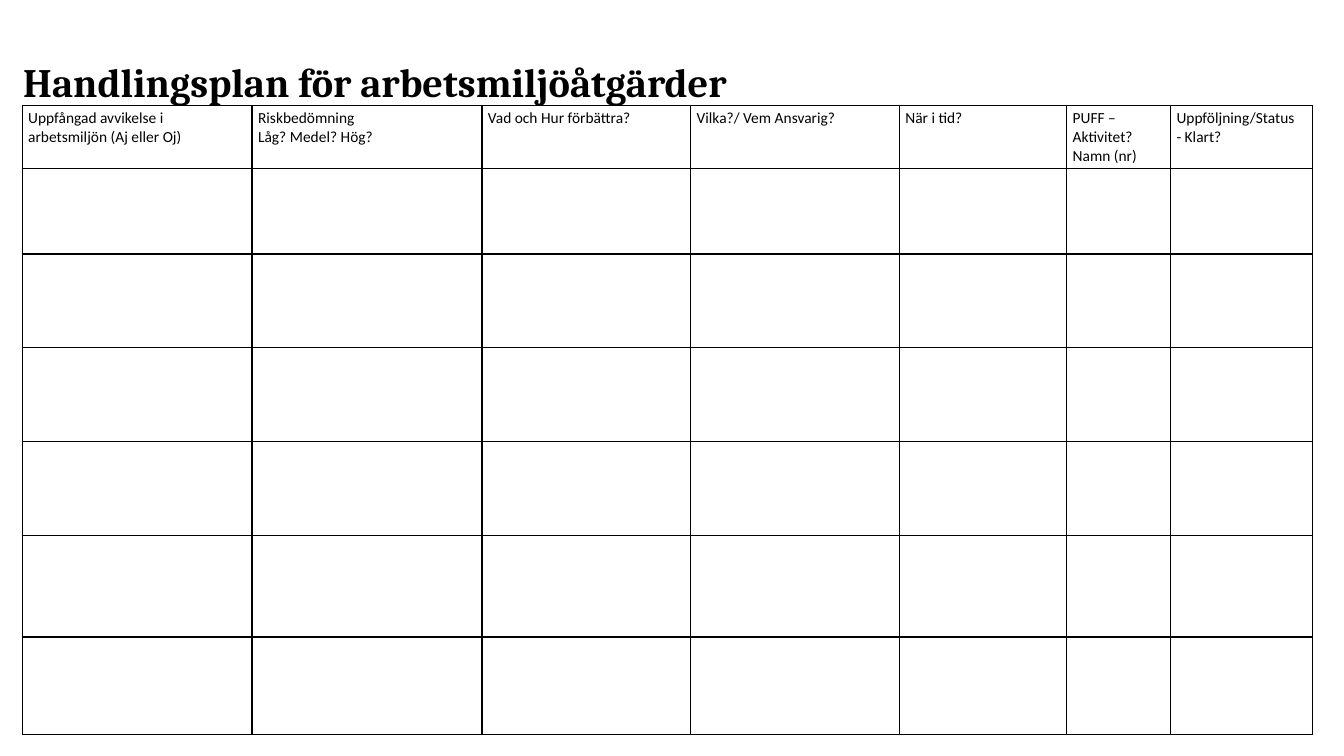
"""Build the work environment action plan slide."""
import dataclasses

import pptx
import pptx.dml.color
import pptx.enum.text
import pptx.oxml
import pptx.oxml.ns
import pptx.util

Inches = pptx.util.Inches


@dataclasses.dataclass(frozen=True)
class Theme:
    """Colours, fonts and type sizes."""
    ink: str = "000000"
    paper: str = "FFFFFF"
    title_font: str = "Cambria"
    body_font: str = "Calibri"
    title_size: float = 28.8
    body_size: float = 11
    border_width: float = 1


HEADINGS = [
    "Uppfångad avvikelse i arbetsmiljön (Aj eller Oj)",
    "Riskbedömning\nLåg? Medel? Hög?",
    "Vad och Hur förbättra?",
    "Vilka?/ Vem Ansvarig?",
    "När i tid?",
    "PUFF – Aktivitet?\vNamn (nr)",
    "Uppföljning/Status \v- Klart?",
]
COLUMN_WIDTHS = [2.28, 2.28, 2.07, 2.07, 1.66, 1.03, 1.41]
ROW_HEIGHTS = [0.62, 0.85, 0.93, 0.93, 0.93, 1.01, 0.97]


class PlanSlide:
    """Hold the theme and the current slide."""

    def __init__(self, deck, theme):
        """Add a blank page to the deck."""
        self.theme = theme
        self.page = deck.slides.add_slide(deck.slide_layouts[6])

    def apply(self, target, values):
        """Set each named attribute on the target."""
        for name, value in values.items():
            setattr(target, name, value)

    def style_font(self, para, name, size, bold=False):
        """Give a paragraph and its runs one font."""
        values = {"name": name, "size": pptx.util.Pt(size), "bold": bold}
        for font in [para.font] + [span.font for span in para.runs]:
            self.apply(font, values)
            font.color.rgb = pptx.dml.color.RGBColor.from_string(self.theme.ink)

    def add_title(self, text, left, top, width, height):
        """Add the bold heading."""
        box = self.page.shapes.add_textbox(
            Inches(left), Inches(top), Inches(width), Inches(height))
        self.apply(box.text_frame, {
            "word_wrap": True,
            "vertical_anchor": pptx.enum.text.MSO_ANCHOR.MIDDLE,
            "text": text,
        })
        para = box.text_frame.paragraphs[0]
        para.line_spacing = 0.9
        self.style_font(para, self.theme.title_font, self.theme.title_size, True)

    def add_borders(self, cell):
        """Draw a line on all four sides of a cell."""
        properties = cell._tc.get_or_add_tcPr()
        width = pptx.util.Pt(self.theme.border_width)
        for index, side in enumerate("LRTB"):
            line = pptx.oxml.parse_xml(
                f'<a:ln{side} {pptx.oxml.ns.nsdecls("a")} w="{width}"><a:solidFill>'
                f'<a:srgbClr val="{self.theme.ink}"/></a:solidFill></a:ln{side}>')
            properties.insert(index, line)

    def fill_cell(self, cell, text):
        """Set the text and look of one cell."""
        self.apply(cell, {
            "text": text,
            "margin_left": Inches(0.06), "margin_right": Inches(0.06),
            "margin_top": Inches(0.03), "margin_bottom": Inches(0.03),
        })
        for para in cell.text_frame.paragraphs:
            self.style_font(para, self.theme.body_font, self.theme.body_size)
        cell.fill.solid()
        cell.fill.fore_color.rgb = pptx.dml.color.RGBColor.from_string(self.theme.paper)
        self.add_borders(cell)

    def add_table(self, headings, widths, heights, left, top):
        """Add a ruled table with headings above empty rows."""
        table = self.page.shapes.add_table(
            len(heights), len(widths), Inches(left), Inches(top),
            Inches(sum(widths)), Inches(sum(heights))).table
        self.apply(table, {"first_row": False, "horz_banding": False})
        for column, width in zip(table.columns, widths):
            column.width = Inches(width)
        for number, (row, height) in enumerate(zip(table.rows, heights)):
            row.height = Inches(height)
            for cell, heading in zip(row.cells, headings):
                self.fill_cell(cell, "" if number else heading)


def main():
    """Build and save the deck."""
    deck = pptx.Presentation()
    deck.slide_width, deck.slide_height = Inches(13.33), Inches(7.5)
    plan = PlanSlide(deck, Theme())
    plan.add_title("Handlingsplan för arbetsmiljöåtgärder", 0.13, 0.42, 10.55, 0.84)
    plan.add_table(HEADINGS, COLUMN_WIDTHS, ROW_HEIGHTS, 0.22, 1.05)
    deck.save("out.pptx")


if __name__ == "__main__":
    main()
